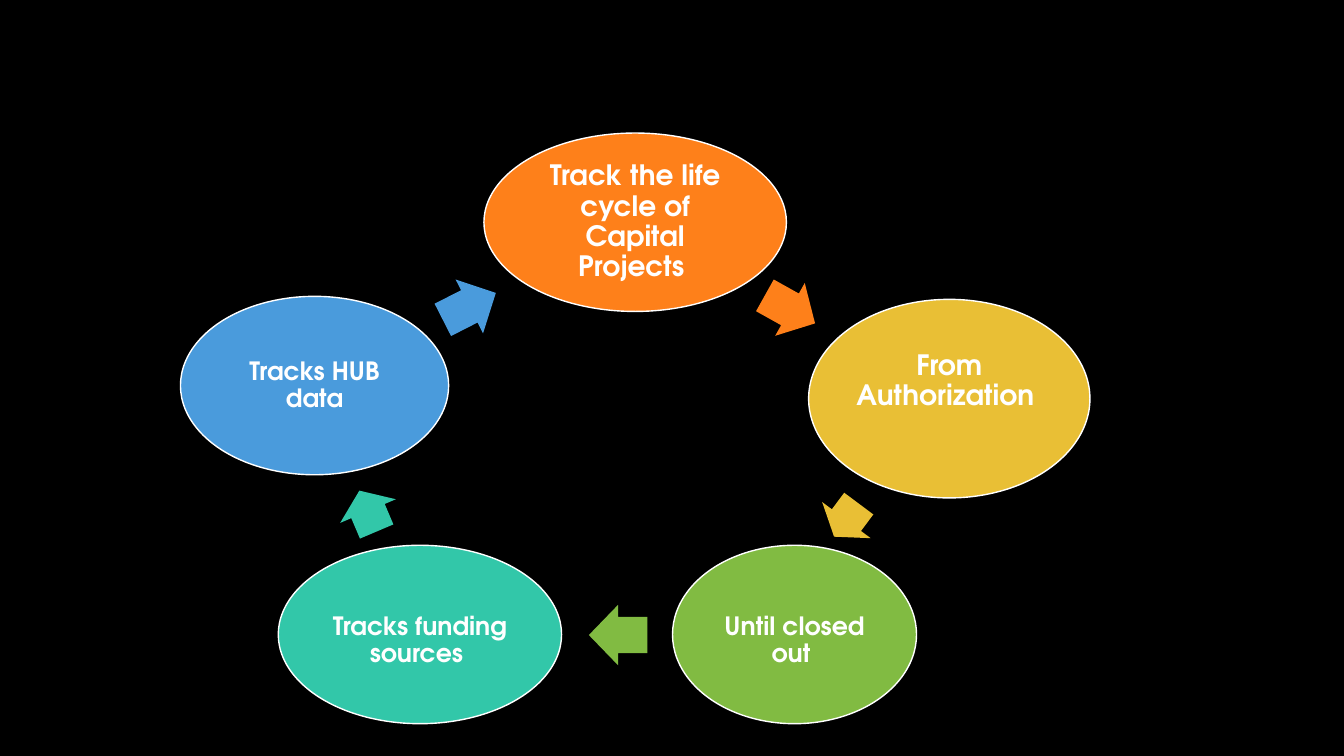
from dataclasses import dataclass

from pptx import Presentation
from pptx import util as u
from pptx.dml import color
from pptx.enum import shapes, text

FONT = "TeX Gyre Adventor"
INSET = 0.03
WHITE = "FFFFFF"


@dataclass
class Stage:
    """One oval of the cycle and the arrow that leaves it."""
    label: str
    fill: str
    oval: tuple[float, float, float, float]
    arrow: tuple[float, float, float, float]
    angle: float
    size: int = 18
    extra_top: float = 0
    extra_bottom: float = 0


STAGES = [
    Stage("Track the life cycle of Capital Projects ", "FE801A",
          (4.8, 1.32, 3, 1.77), (7.55, 2.77, 0.57, 0.6), 29.2, size=20),
    Stage("From Authorization ", "E9BF35",
          (8.02, 2.97, 2.79, 1.97), (8.19, 4.86, 0.41, 0.6), 126.7,
          size=20, extra_bottom=0.34),
    Stage("Until closed out ", "81BB42",
          (6.67, 5.41, 2.42, 1.77), (5.84, 6, 0.58, 0.6), 180, extra_top=0.13),
    Stage("Tracks funding sources ", "32C7A9",
          (2.76, 5.41, 2.81, 1.77), (3.43, 4.77, 0.44, 0.6), 247, extra_top=0.13),
    Stage("Tracks HUB data", "4A9BDC",
          (1.79, 2.94, 2.66, 1.77), (4.36, 2.74, 0.59, 0.6), 333),
]


def rgb(value: str) -> color.RGBColor:
    return color.RGBColor.from_string(value)


def add_filled(page, kind, place: tuple[float, float, float, float], fill: str):
    shape = page.shapes.add_shape(kind, *(u.Inches(length) for length in place))
    shape.shadow.inherit = False
    shape.fill.solid()
    shape.fill.fore_color.rgb = rgb(fill)
    shape.line.fill.background()
    return shape


def add_oval(page, stage: Stage) -> None:
    oval = add_filled(page, shapes.MSO_SHAPE.OVAL, stage.oval, stage.fill)
    oval.line.color.rgb = rgb(WHITE)
    oval.line.width = u.Pt(1)

    # Label, with insets that set its height in the oval
    box = oval.text_frame
    box.word_wrap = True
    box.vertical_anchor = text.MSO_ANCHOR.MIDDLE
    box.margin_left = box.margin_right = u.Inches(INSET)
    box.margin_top = u.Inches(INSET + stage.extra_top)
    box.margin_bottom = u.Inches(INSET + stage.extra_bottom)
    para = box.paragraphs[0]
    para.alignment = text.PP_ALIGN.CENTER
    para.line_spacing = 0.9
    span = para.add_run()
    span.text = stage.label
    span.font.name = FONT
    span.font.size = u.Pt(stage.size)
    span.font.bold = True
    span.font.color.rgb = rgb(WHITE)


def add_arrow(page, stage: Stage) -> None:
    arrow = add_filled(page, shapes.MSO_SHAPE.RIGHT_ARROW, stage.arrow, stage.fill)
    arrow.adjustments[0] = 0.6
    arrow.adjustments[1] = 0.5
    arrow.rotation = stage.angle


def main() -> None:
    # Black page
    deck = Presentation()
    deck.slide_width = u.Inches(13.33)
    deck.slide_height = u.Inches(7.5)
    page = deck.slides.add_slide(deck.slide_layouts[6])
    page.background.fill.solid()
    page.background.fill.fore_color.rgb = rgb("000000")

    # Cycle
    for stage in STAGES:
        add_oval(page, stage)
        add_arrow(page, stage)

    deck.save("out.pptx")


if __name__ == "__main__":
    main()
